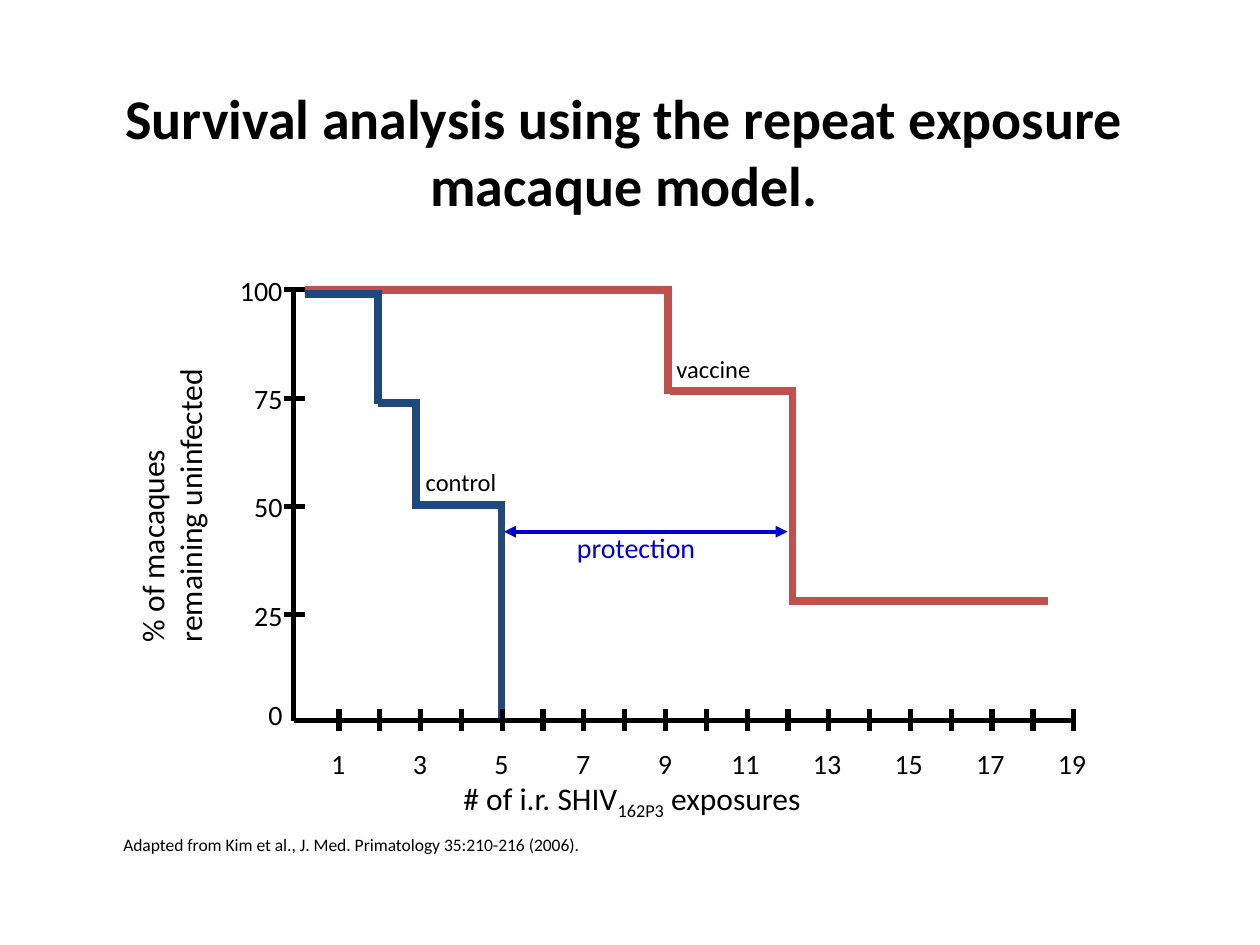
from lxml import etree
from pptx import Presentation
from pptx.dml.color import RGBColor
from pptx.enum.shapes import MSO_CONNECTOR as Connector
from pptx.enum.text import MSO_AUTO_SIZE as AutoSize, PP_ALIGN as Align
from pptx.oxml.ns import qn
from pptx.util import Inches, Pt

BLACK, RED, NAVY, BLUE = "000000", "C0504D", "1F497D", "0000D4"
AXIS_LEFT, AXIS_TOP, AXIS_BOTTOM = 2.33, 2.3, 5.72
FIRST_EXPOSURE, EXPOSURE_GAP, PERCENT_GAP = 2.69, 0.324, 0.86
VACCINE = [
    (2.42, 2.3, 5.33, 2.3), (5.3, 2.3, 5.3, 3.13), (5.32, 3.1, 6.32, 3.1),
    (6.29, 3.13, 6.29, 4.8), (6.32, 4.77, 8.32, 4.77),
]
CONTROL = [
    (2.42, 2.33, 3, 2.33), (3, 2.3, 3, 3.21), (3, 3.2, 3.33, 3.2),
    (3.3, 3.2, 3.3, 4.04), (3.33, 4.01, 4.01, 4.01), (3.98, 4.03, 3.98, 5.7),
]


def color(value):
    """Turn a hex string into a colour."""
    return RGBColor.from_string(value)


def add_line(slide, ends, shade=BLACK, width=3, arrows=False):
    """Draw a straight line between two points, with optional arrowheads."""
    line = slide.shapes.add_connector(Connector.STRAIGHT, *map(Inches, ends))
    line.line.color.rgb = color(shade)
    line.line.width = Pt(width)
    properties = line._element.spPr
    etree.SubElement(properties, qn("a:effectLst"))
    if arrows:
        outline = properties.find(qn("a:ln"))
        for end in ("a:headEnd", "a:tailEnd"):
            etree.SubElement(outline, qn(end), type="triangle")


def add_text(slide, area, paragraphs, size=16, shade=BLACK, bold=False,
             align=Align.LEFT, wrap=False, rotation=0):
    """Add a text box; a paragraph is a list of (text, baseline) spans."""
    box = slide.shapes.add_textbox(*map(Inches, area))
    box.rotation = rotation
    frame = box.text_frame
    frame.word_wrap = wrap
    frame.auto_size = AutoSize.SHAPE_TO_FIT_TEXT
    for index, spans in enumerate(paragraphs):
        para = frame.add_paragraph() if index else frame.paragraphs[0]
        para.alignment = align
        for text, baseline in spans:
            span = para.add_run()
            span.text = text
            span.font.name = "Calibri"
            span.font.size = Pt(size)
            span.font.bold = bold
            span.font.color.rgb = color(shade)
            if baseline:
                span._r.get_or_add_rPr().set("baseline", str(baseline * 1000))


def add_label(slide, area, *lines, **style):
    """Add plain lines of text, one paragraph each."""
    add_text(slide, area, [[(line, 0)] for line in lines], **style)


def label_width(text):
    """Give the box width for a number of this many digits."""
    return 0.19 + 0.13 * len(text)


def add_curve(slide, segments, shade):
    """Draw a survival curve from its segments."""
    for ends in segments:
        add_line(slide, ends, shade, 4.5)


def add_percent_axis(slide):
    """Draw the vertical axis with its ticks and numbers."""
    add_line(slide, (AXIS_LEFT, AXIS_BOTTOM, AXIS_LEFT, AXIS_TOP))
    for step, text in enumerate(("100", "75", "50", "25", "0")):
        y = AXIS_TOP + step * PERCENT_GAP
        top = 5.49 if text == "0" else y - 0.18
        width = label_width(text)
        add_label(slide, (2.34 - width, top, width, 0.37), text, align=Align.RIGHT)
        if text != "0":
            add_line(slide, (2.25, y, 2.42, y))


def add_exposure_axis(slide):
    """Draw the horizontal axis with its ticks and odd numbers."""
    add_line(slide, (AXIS_LEFT, AXIS_BOTTOM, 8.5, AXIS_BOTTOM))
    for exposure in range(1, 20):
        x = FIRST_EXPOSURE + (exposure - 1) * EXPOSURE_GAP
        add_line(slide, (x, 5.8, x, 5.63))
        if exposure % 2:
            text = str(exposure)
            width = label_width(text)
            add_label(slide, (x - width / 2, 5.88, width, 0.37), text)


def main():
    """Build the survival analysis slide."""
    deck = Presentation()
    deck.slide_width, deck.slide_height = Inches(10), Inches(7.5)
    slide = deck.slides.add_slide(deck.slide_layouts[6])
    add_label(slide, (0.12, 0.61, 9.67, 1.18),
              "Survival analysis using the repeat exposure macaque model.",
              size=32, bold=True, align=Align.CENTER, wrap=True)
    add_curve(slide, VACCINE, RED)
    add_curve(slide, CONTROL, NAVY)
    add_percent_axis(slide)
    add_exposure_axis(slide)
    add_text(slide, (3.58, 6.13, 3.47, 0.4),
             [[("# of i.r. SHIV", 0), ("162P3", -25), (" exposures", 0)]], size=18)
    add_label(slide, (-0.01, 3.48, 2.73, 0.7), "% of macaques",
              "remaining uninfected", size=18, rotation=270)
    add_label(slide, (3.28, 3.66, 0.86, 0.33), "control", size=14)
    add_label(slide, (5.27, 2.76, 0.91, 0.33), "vaccine", size=14)
    add_line(slide, (4, 4.22, 6.25, 4.22), BLUE, 2.25, arrows=True)
    add_label(slide, (4.48, 4.16, 1.29, 0.37), "protection", shade=BLUE)
    add_label(slide, (0.88, 6.57, 7.42, 0.27),
              "Adapted from Kim et al., J. Med. Primatology 35:210-216 (2006).",
              size=10, wrap=True)
    deck.save("out.pptx")


if __name__ == "__main__":
    main()
